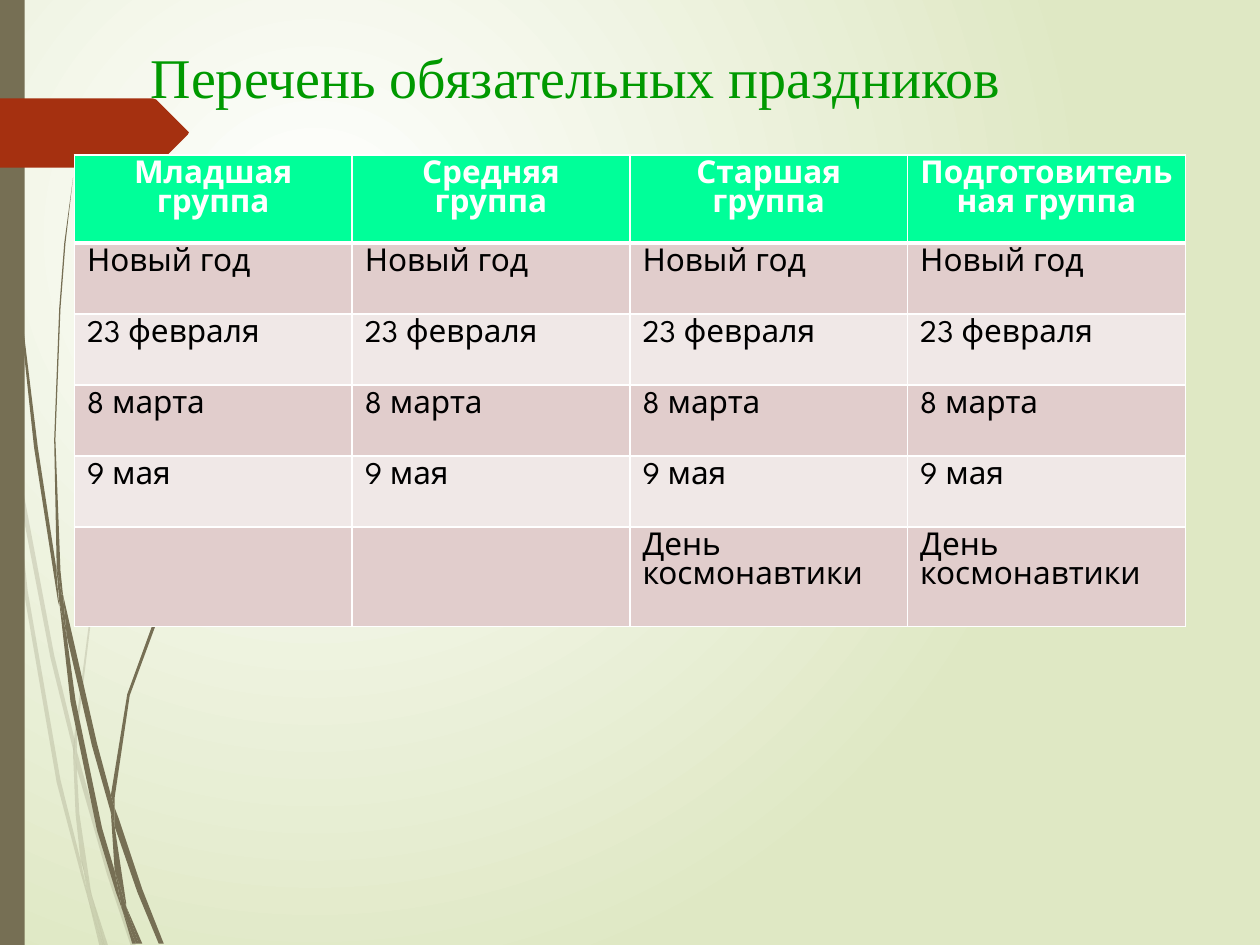
from lxml.etree import SubElement
from pptx import Presentation
from pptx.dml.color import RGBColor
from pptx.enum.shapes import MSO_SHAPE
from pptx.enum.text import MSO_ANCHOR, PP_ALIGN
from pptx.oxml.ns import qn
from pptx.util import Cm, Pt

WHITE = RGBColor(0xFF, 0xFF, 0xFF)
BLACK = RGBColor(0, 0, 0)
PALE_GREEN = RGBColor(0xDF, 0xE8, 0xC4)
OLIVE = RGBColor(0x76, 0x6F, 0x54)
RUST = RGBColor(0xA5, 0x30, 0x10)
TITLE_GREEN = RGBColor(0x00, 0x99, 0x00)
HEADER_GREEN = RGBColor(0x00, 0xFF, 0x99)
BANDS = [RGBColor(0xE1, 0xCD, 0xCC), RGBColor(0xF0, 0xE8, 0xE7)]

TITLE_FONT = {"name": "Times New Roman", "size": Pt(32)}
CELL_FONT = {"name": "League Spartan", "size": Pt(18)}
UNIT = Cm(0.0254)

FAINT_STEMS = [
    [(8, 350), (6, 322), (0, 282), (0, 299), (7, 344)],
    [(40, 522), (59, 599), (59, 586), (43, 520), (10, 345), (12, 376)],
    [(64, 607), (61, 596), (61, 610), (85, 694), (104, 751), (108, 751), (88, 692)],
    [(83, 751), (86, 751), (73, 711)],
    [(64, 683), (48, 619), (22, 469), (12, 376), (8, 350), (19, 470),
     (45, 621), (64, 693), (70, 714), (69, 707)],
    [(58, 599), (60, 646), (64, 683), (67, 692), (73, 711), (72, 706),
     (63, 646), (61, 610), (61, 608)],
    [(61, 584), (76, 462), (111, 349), (159, 245), (187, 198), (201, 175),
     (217, 154), (217, 153), (201, 175), (186, 197), (158, 244), (110, 348),
     (75, 461), (59, 584), (59, 586), (61, 596)],
    [(70, 714), (79, 751), (82, 751)],
    [(61, 608), (61, 610), (61, 596), (59, 586), (58, 599)],
    [(67, 692), (65, 683), (69, 707), (70, 714), (82, 751), (83, 751), (73, 711)],
]
SOLID_STEMS = [
    [(5, 110), (14, 233), (27, 355), (46, 477), (47, 481), (45, 457), (45, 453),
     (30, 355), (15, 232), (6, 109), (4, 48), (3, 0), (2, 0), (3, 48)],
    [(73, 592), (88, 645), (88, 633), (88, 631), (77, 590), (50, 472), (53, 505)],
    [(94, 649), (91, 641), (91, 656), (109, 708), (126, 749), (130, 749), (113, 706)],
    [(91, 691), (81, 657), (60, 556), (53, 505), (47, 477), (56, 557),
     (77, 659), (92, 708), (97, 722), (96, 717)],
    [(50, 472), (48, 453), (44, 349), (48, 245), (52, 193), (58, 141),
     (51, 193), (47, 245), (43, 349), (45, 449), (49, 472)],
    [(110, 749), (113, 749), (100, 719)],
    [(47, 477), (53, 505), (50, 472), (49, 472), (45, 449), (45, 453)],
    [(91, 633), (103, 552), (131, 476), (169, 406), (191, 374), (203, 359),
     (216, 344), (215, 344), (203, 358), (191, 373), (168, 405), (129, 474),
     (101, 551), (88, 631), (91, 641)],
    [(97, 722), (105, 749), (108, 749)],
    [(88, 645), (91, 691), (96, 706), (100, 719), (100, 716), (91, 656), (90, 651)],
    [(88, 645), (90, 651), (91, 656), (91, 641), (88, 631), (88, 633)],
    [(96, 706), (91, 691), (96, 717), (97, 722), (108, 749), (110, 749), (100, 719)],
]
PAGE_TAB = [(0, 78), (121, 78), (124, 79), (149, 104), (150, 105), (149, 107),
            (124, 132), (121, 133), (0, 133)]

COMMON = ["Новый год", "23 февраля", "8 марта", "9 мая"]
SPACE_DAY = "День космонавтики"
GROUPS = {
    "Младшая группа": COMMON + [""],
    "Средняя группа": COMMON + [""],
    "Старшая группа": COMMON + [SPACE_DAY],
    "Подготовительная группа": COMMON + [SPACE_DAY],
}


def set_background(s):
    fill = s.background.fill
    fill.gradient()
    for stop, color, position in zip(fill.gradient_stops, (WHITE, PALE_GREEN), (0, 1)):
        stop.color.rgb = color
        stop.position = position
    grad = s.background._cSld.find(".//" + qn("a:gradFill"))
    lin = grad.find(qn("a:lin"))
    if lin is not None:
        grad.remove(lin)
    radial = SubElement(grad, qn("a:path"), path="circle")
    SubElement(radial, qn("a:fillToRect"), l="50000", t="50000", r="100000", b="100000")


def paint(sp, color, opacity=100):
    sp.shadow.inherit = False
    sp.fill.solid()
    sp.fill.fore_color.rgb = color
    sp.line.fill.background()
    if opacity < 100:
        clr = sp._element.spPr.find(".//" + qn("a:srgbClr"))
        SubElement(clr, qn("a:alpha"), val=str(opacity * 1000))


def add_outline(s, points, color, opacity=100):
    builder = s.shapes.build_freeform(*points[0], scale=UNIT)
    builder.add_line_segments(points[1:], close=True)
    paint(builder.convert_to_shape(), color, opacity)


def write(tf, text, font, color, bold=False, align=PP_ALIGN.LEFT):
    p = tf.paragraphs[0]
    p.alignment = align
    r = p.add_run()
    r.text = text
    for key, value in {**font, "bold": bold}.items():
        setattr(r.font, key, value)
    r.font.color.rgb = color


def add_title(s, text):
    tf = s.shapes.add_textbox(Cm(2.79), Cm(0.74), Cm(19.79), Cm(2.59)).text_frame
    tf.word_wrap = True
    tf.vertical_anchor = MSO_ANCHOR.TOP
    write(tf, text, TITLE_FONT, TITLE_GREEN)


def set_borders(cell, widths):
    tcPr = cell._tc.get_or_add_tcPr()
    for side, width in widths.items():
        ln = SubElement(tcPr, qn(f"a:ln{side}"), w=str(Pt(width)))
        fill = SubElement(ln, qn("a:solidFill"))
        SubElement(fill, qn("a:srgbClr"), val=str(WHITE))


def fill_cell(cell, row, text):
    header = row == 0
    set_borders(cell, {"L": 1, "R": 1, "T": 3 if row == 1 else 1, "B": 3 if header else 1})
    cell.fill.solid()
    cell.fill.fore_color.rgb = HEADER_GREEN if header else BANDS[(row - 1) % 2]
    align = PP_ALIGN.CENTER if header else PP_ALIGN.LEFT
    write(cell.text_frame, text, CELL_FONT, WHITE if header else BLACK, header, align)


def add_holiday_table(s):
    heights = [Cm(1.43)] * 5 + [Cm(2.01)]
    table = s.shapes.add_table(len(heights), len(GROUPS), Cm(1.5), Cm(3.12),
                               Cm(22.4), sum(heights)).table
    for row, height in zip(table.rows, heights):
        row.height = height
    for col, (group, holidays) in enumerate(GROUPS.items()):
        for row, text in enumerate([group] + holidays):
            fill_cell(table.cell(row, col), row, text)


def main():
    prs = Presentation()
    prs.slide_width, prs.slide_height = Cm(25.4), Cm(19.05)
    s = prs.slides.add_slide(prs.slide_layouts[6])
    set_background(s)
    for stem in FAINT_STEMS:
        add_outline(s, stem, OLIVE, 20)
    for stem in SOLID_STEMS:
        add_outline(s, stem, OLIVE)
    paint(s.shapes.add_shape(MSO_SHAPE.RECTANGLE, 0, 0, Cm(0.5), Cm(19.05)), OLIVE)
    add_outline(s, PAGE_TAB, RUST)
    add_title(s, "Перечень обязательных праздников")
    add_holiday_table(s)
    prs.save("out.pptx")


if __name__ == "__main__":
    main()
